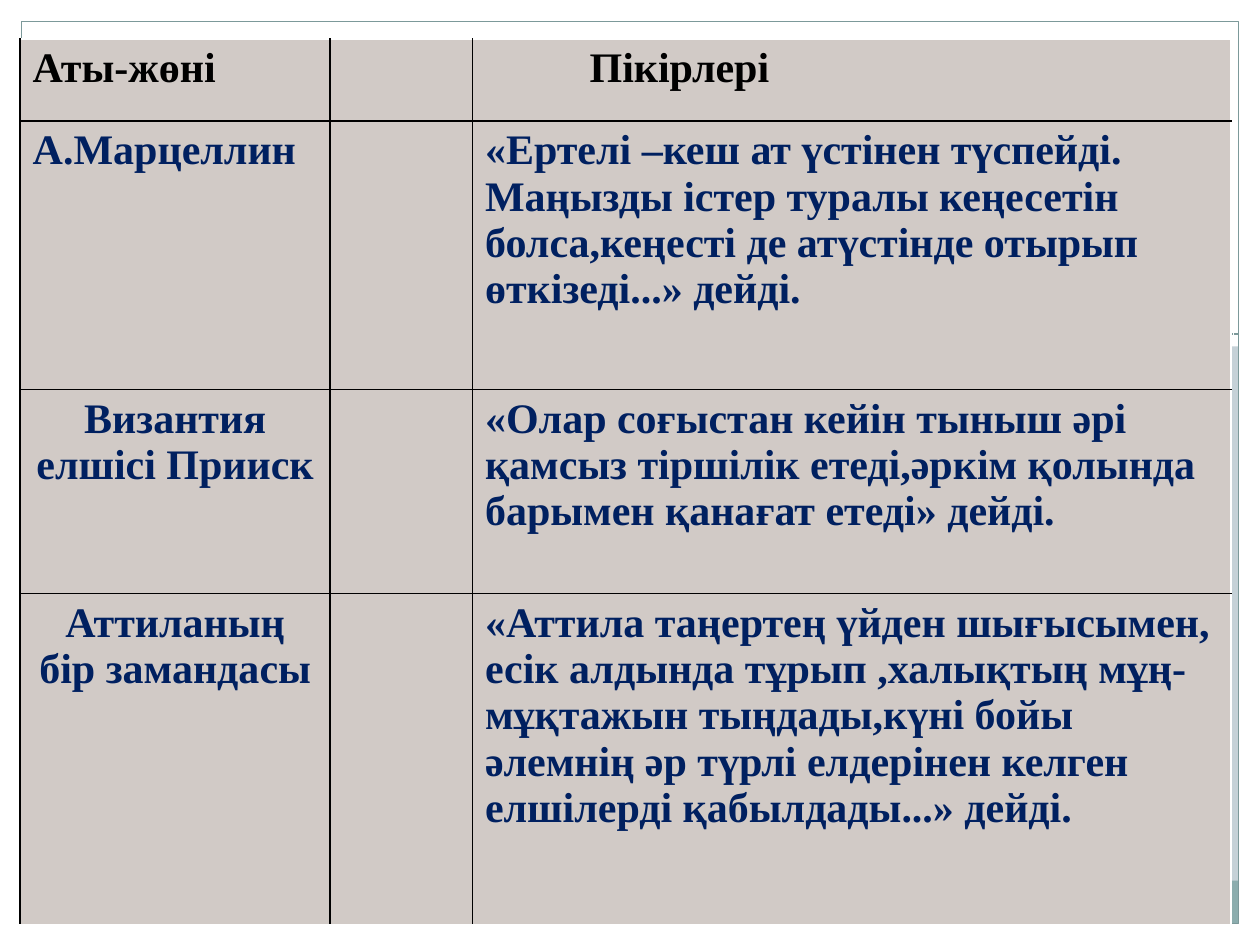
from lxml import etree
from pptx import Presentation
from pptx.dml.color import RGBColor
from pptx.enum.dml import MSO_LINE
from pptx.enum.shapes import MSO_CONNECTOR, MSO_SHAPE
from pptx.enum.text import PP_ALIGN
from pptx.oxml.ns import qn
from pptx.util import Inches, Pt

RECT, STRAIGHT = MSO_SHAPE.RECTANGLE, MSO_CONNECTOR.STRAIGHT
DASH = MSO_LINE.SQUARE_DOT
LEFT, CENTER = PP_ALIGN.LEFT, PP_ALIGN.CENTER

W, H = 10, 7.5
MARGIN = 0.17
WHITE, BLACK, NAVY = "FFFFFF", "000000", "002060"
MIST, TEAL, FRAME, CELL = "C5D1D7", "8CADAE", "7C999A", "D1CAC6"
FONT = {"name": "Times New Roman", "size": Pt(24), "bold": True}

COLS = [2.46, 1.13, 6.02]
ROWS = [0.65, 2.13, 1.62, 2.63]
HEADER_INDENT = 0.83
# name, alignment of the name, opinion
OPINIONS = [
    ("Аты-жөні", LEFT, "Пікірлері"),
    ("А.Марцеллин", LEFT,
     "«Ертелі –кеш ат үстінен түспейді. Маңызды істер туралы кеңесетін "
     "болса,кеңесті де атүстінде отырып өткізеді...» дейді."),
    ("Византия елшісі Прииск", CENTER,
     "«Олар соғыстан кейін тыныш әрі қамсыз тіршілік етеді,әркім қолында "
     "барымен қанағат етеді» дейді."),
    ("Аттиланың бір замандасы", CENTER,
     "«Аттила таңертең үйден шығысымен, есік алдында тұрып ,халықтың "
     "мұң-мұқтажын тыңдады,күні бойы әлемнің әр түрлі елдерінен келген "
     "елшілерді қабылдады...» дейді."),
]


def rgb(value):
    return RGBColor.from_string(value)


def add_rect(s, box, fill=None, line=None):
    sp = s.shapes.add_shape(RECT, *map(Inches, box))
    sp.shadow.inherit = False
    if fill:
        sp.fill.solid()
        sp.fill.fore_color.rgb = rgb(fill)
    else:
        sp.fill.background()
    if line:
        sp.line.color.rgb = rgb(line)
        sp.line.width = Pt(0.75)
    else:
        sp.line.fill.background()


def add_backdrop(s, left, top, width, height):
    """White margins and header around a tinted panel, with a thin frame."""
    right, bottom = left + width, top + height
    divider = 2.65
    s.background.fill.solid()
    s.background.fill.fore_color.rgb = rgb(MIST)
    for box in [(0, bottom, W, H - bottom), (right, 0, W - right, H),
                (0, 0, left, H), (0, 0, W, divider + 0.1)]:
        add_rect(s, box, WHITE)
    add_rect(s, (left, bottom - 0.34, width, 0.34), TEAL)
    line = s.shapes.add_connector(
        STRAIGHT, *map(Inches, (left, divider, right, divider)))
    line.line.color.rgb = rgb(FRAME)
    line.line.width = Pt(0.9)
    line.line.dash_style = DASH
    etree.SubElement(line._element.spPr, qn("a:effectLst"))
    add_rect(s, (left, top, width, height), line=FRAME)


def set_borders(cell, colors):
    """Colours run left, right, top, bottom."""
    tcPr = cell._tc.get_or_add_tcPr()
    for i, (side, color) in enumerate(zip("LRTB", colors)):
        ln = etree.Element(qn(f"a:ln{side}"), w=str(Pt(1)))
        fill = etree.SubElement(ln, qn("a:solidFill"))
        etree.SubElement(fill, qn("a:srgbClr"), val=color)
        tcPr.insert(i, ln)


def set_text(cell, text, color, align):
    p = cell.text_frame.paragraphs[0]
    p.alignment = align
    r = p.add_run()
    r.text = text
    for key, value in FONT.items():
        setattr(r.font, key, value)
    r.font.color.rgb = rgb(color)


def add_opinions(s, left, top, width, height):
    table = s.shapes.add_table(
        len(ROWS), len(COLS), *map(Inches, (left, top, width, height))).table
    for column, share in zip(table.columns, COLS):
        column.width = Inches(width * share / sum(COLS))
    for row, share in zip(table.rows, ROWS):
        row.height = Inches(height * share / sum(ROWS))
    last_row, last_col = len(ROWS) - 1, len(COLS) - 1
    for i, (name, align, opinion) in enumerate(OPINIONS):
        color = NAVY if i else BLACK
        set_text(table.cell(i, 0), name, color, align)
        set_text(table.cell(i, last_col), opinion, color, LEFT)
        for j in range(len(COLS)):
            cell = table.cell(i, j)
            cell.fill.solid()
            cell.fill.fore_color.rgb = rgb(CELL)
            set_borders(cell, (BLACK,
                               WHITE if j == last_col else BLACK,
                               WHITE if i == 0 else BLACK,
                               WHITE if i == last_row else BLACK))
    header = table.cell(0, last_col).text_frame.paragraphs[0]
    header._p.get_or_add_pPr().set("marL", str(Inches(HEADER_INDENT)))


def main():
    prs = Presentation()
    prs.slide_width, prs.slide_height = Inches(W), Inches(H)
    s = prs.slides.add_slide(prs.slide_layouts[6])
    add_backdrop(s, MARGIN, MARGIN, W - 2 * MARGIN, H - 2 * MARGIN)
    add_opinions(s, 0.16, 0.31, sum(COLS), sum(ROWS))
    prs.save("out.pptx")


if __name__ == "__main__":
    main()
